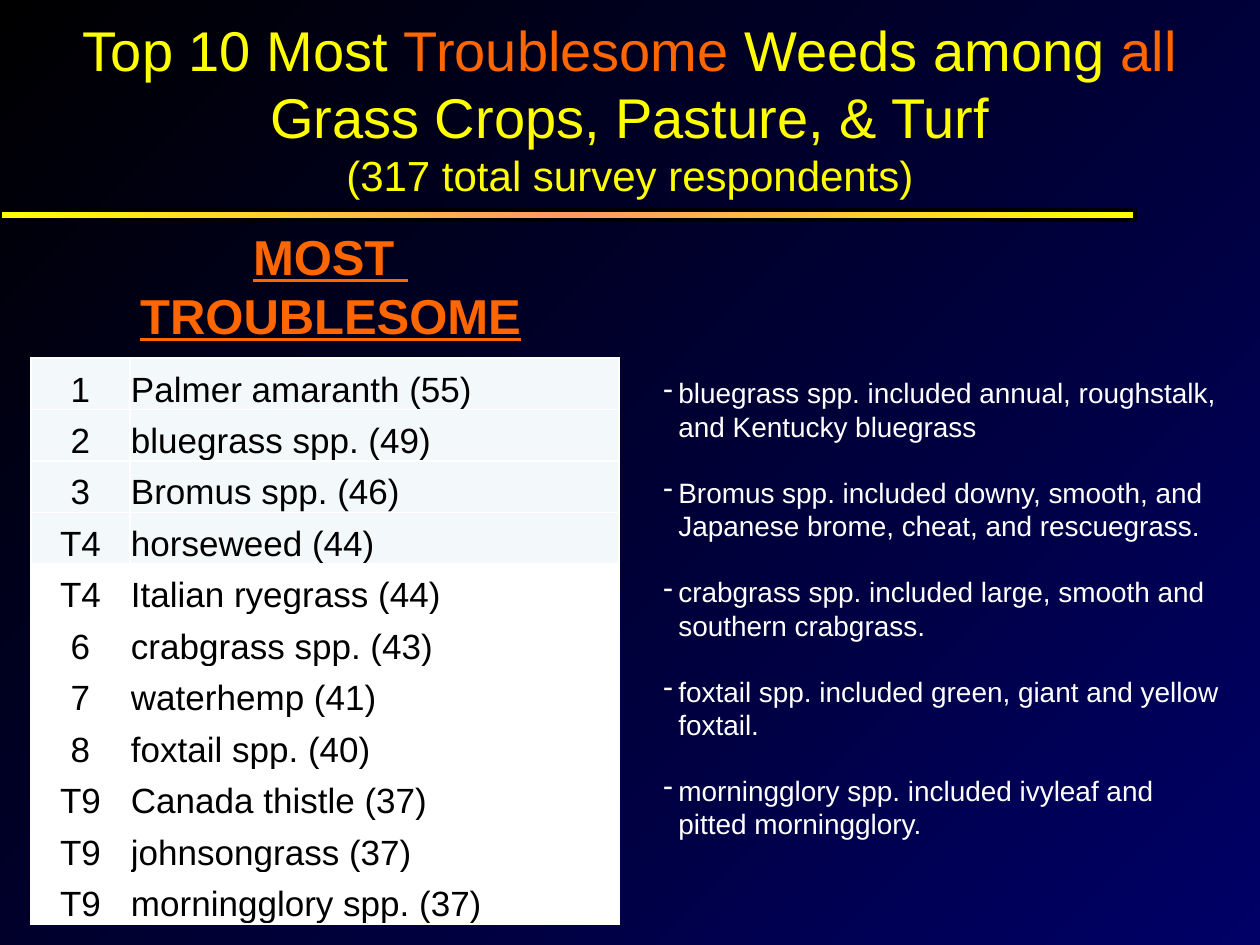
from copy import deepcopy
from typing import NamedTuple

from lxml.etree import SubElement
from pptx import Presentation
from pptx.dml.color import RGBColor
from pptx.enum.shapes import MSO_SHAPE
from pptx.enum.text import MSO_ANCHOR, MSO_AUTO_SIZE, PP_ALIGN
from pptx.oxml.ns import qn
from pptx.util import Emu, Pt

SCALE = 914400 / 126
COLORS = {
    "black": "000000", "navy": "000066", "yellow": "FFFF00", "orange": "FF6600",
    "peach": "FF9966", "white": "FFFFFF", "pale": "F3F9FA",
}


class Box(NamedTuple):
    left: int
    top: int
    width: int
    height: int


class Run(NamedTuple):
    text: str
    color: str
    size: int
    bold: bool = False
    under: bool = False


class Weed(NamedTuple):
    rank: str
    name: str
    count: int
    fill: str


TITLE = [
    [Run("Top 10 Most ", "yellow", 32), Run("Troublesome", "orange", 32),
     Run(" Weeds among ", "yellow", 32), Run("all", "orange", 32),
     Run(" Grass Crops, Pasture, & Turf", "yellow", 32)],
    [Run("(317 total survey respondents)", "yellow", 24)],
]
HEADING = [[Run(word, "orange", 28, True, True)] for word in ("MOST ", "TROUBLESOME")]
WEEDS = [
    Weed("1", "Palmer amaranth", 55, "pale"),
    Weed("2", "bluegrass spp.", 49, "pale"),
    Weed("3", "Bromus spp.", 46, "pale"),
    Weed("T4", "horseweed", 44, "pale"),
    Weed("T4", "Italian ryegrass", 44, "white"),
    Weed("6", "crabgrass spp.", 43, "white"),
    Weed("7", "waterhemp", 41, "white"),
    Weed("8", "foxtail spp.", 40, "white"),
    Weed("T9", "Canada thistle", 37, "white"),
    Weed("T9", "johnsongrass", 37, "white"),
    Weed("T9", "morningglory spp.", 37, "white"),
]
NOTES = [[Run(text, "white", 16)] for text in (
    "bluegrass spp. included annual, roughstalk, and Kentucky bluegrass",
    "Bromus spp. included downy, smooth, and Japanese brome, cheat, and rescuegrass.",
    "crabgrass spp. included large, smooth and southern crabgrass.",
    "foxtail spp. included green, giant and yellow foxtail.",
    "morningglory spp. included ivyleaf and pitted morningglory.",
)]


def px(count: int) -> Emu:
    return Emu(round(count * SCALE))


def rgb(name: str) -> RGBColor:
    return RGBColor.from_string(COLORS[name])


def place(shape, box: Box) -> None:
    shape.left, shape.top, shape.width, shape.height = map(px, box)


def write(frame, lines: list[list[Run]], align: PP_ALIGN) -> None:
    for i, line in enumerate(lines):
        para = frame.paragraphs[0] if i == 0 else frame.add_paragraph()
        para.alignment = align
        for item in line:
            run = para.add_run()
            run.text = item.text
            font = run.font
            font.name, font.size = "Arial", Pt(item.size)
            font.bold, font.underline = item.bold, item.under
            font.color.rgb = rgb(item.color)


def blend(fill, names: list[str], angle: int) -> None:
    fill.gradient()
    fill.gradient_angle = angle
    first = fill.gradient_stops[0]
    for _ in names[2:]:
        node = first._gs
        node.addnext(deepcopy(node))
    for i, (stop, name) in enumerate(zip(fill.gradient_stops, names)):
        stop.position = i / (len(names) - 1)
        stop.color.rgb = rgb(name)


def add_text(slide, box: Box, lines: list[list[Run]], align: PP_ALIGN, wrap: bool):
    shape = slide.shapes.add_textbox(*map(px, box))
    shape.text_frame.word_wrap = wrap
    write(shape.text_frame, lines, align)
    return shape.text_frame


def add_title(slide, box: Box) -> None:
    title = slide.shapes.title
    place(title, box)
    frame = title.text_frame
    frame.auto_size = MSO_AUTO_SIZE.NONE
    frame.vertical_anchor = MSO_ANCHOR.MIDDLE
    write(frame, TITLE, PP_ALIGN.CENTER)


def add_rule(slide, box: Box) -> None:
    rule = slide.shapes.add_shape(MSO_SHAPE.RECTANGLE, *map(px, box))
    rule.shadow.inherit = False
    blend(rule.fill, ["yellow", "peach", "yellow"], 0)
    rule.line.color.rgb = rgb("black")
    rule.line.width = Pt(2.25)


def edge(cell) -> None:
    props = cell._tc.get_or_add_tcPr()
    for i, side in enumerate(("a:lnL", "a:lnR", "a:lnT", "a:lnB")):
        line = props.makeelement(qn(side), {"w": str(Pt(1))})
        props.insert(i, line)
        fill = SubElement(line, qn("a:solidFill"))
        SubElement(fill, qn("a:srgbClr"), val=COLORS["white"])


def add_weeds(slide, box: Box, widths: list[int]) -> None:
    table = slide.shapes.add_table(len(WEEDS), len(widths), *map(px, box)).table
    table.first_row = table.horz_banding = False
    for col, width in zip(table.columns, widths):
        col.width = px(width)
    for row, weed in zip(table.rows, WEEDS):
        texts = (weed.rank, f"{weed.name} ({weed.count})")
        aligns = (PP_ALIGN.CENTER, PP_ALIGN.LEFT)
        for cell, text, align in zip(row.cells, texts, aligns):
            cell.margin_left = cell.margin_right = cell.margin_top = px(1)
            cell.margin_bottom = 0
            cell.vertical_anchor = MSO_ANCHOR.BOTTOM
            cell.fill.solid()
            cell.fill.fore_color.rgb = rgb(weed.fill)
            write(cell.text_frame, [[Run(text, "black", 20)]], align)
            edge(cell)


def add_notes(slide, box: Box) -> None:
    frame = add_text(slide, box, NOTES, PP_ALIGN.LEFT, True)
    frame.margin_top = px(27)
    for i, para in enumerate(frame.paragraphs):
        para.space_before = Pt(18.4 if i else 0)
        props = para._p.get_or_add_pPr()
        props.set("marL", str(px(15)))
        props.set("indent", str(-px(15)))
        SubElement(props, qn("a:buChar"), char="-")


def main() -> None:
    deck = Presentation()
    deck.slide_width, deck.slide_height = px(1260), px(945)
    slide = deck.slides.add_slide(deck.slide_layouts[5])
    blend(slide.background.fill, ["black", "navy"], 315)
    add_title(slide, Box(21, 16, 1218, 183))
    add_rule(slide, Box(0, 210, 1135, 10))
    add_text(slide, Box(125, 220, 411, 131), HEADING, PP_ALIGN.CENTER, False)
    add_weeds(slide, Box(31, 358, 588, 566), [99, 489])
    add_notes(slide, Box(651, 349, 588, 509))
    deck.save("out.pptx")


if __name__ == "__main__":
    main()
